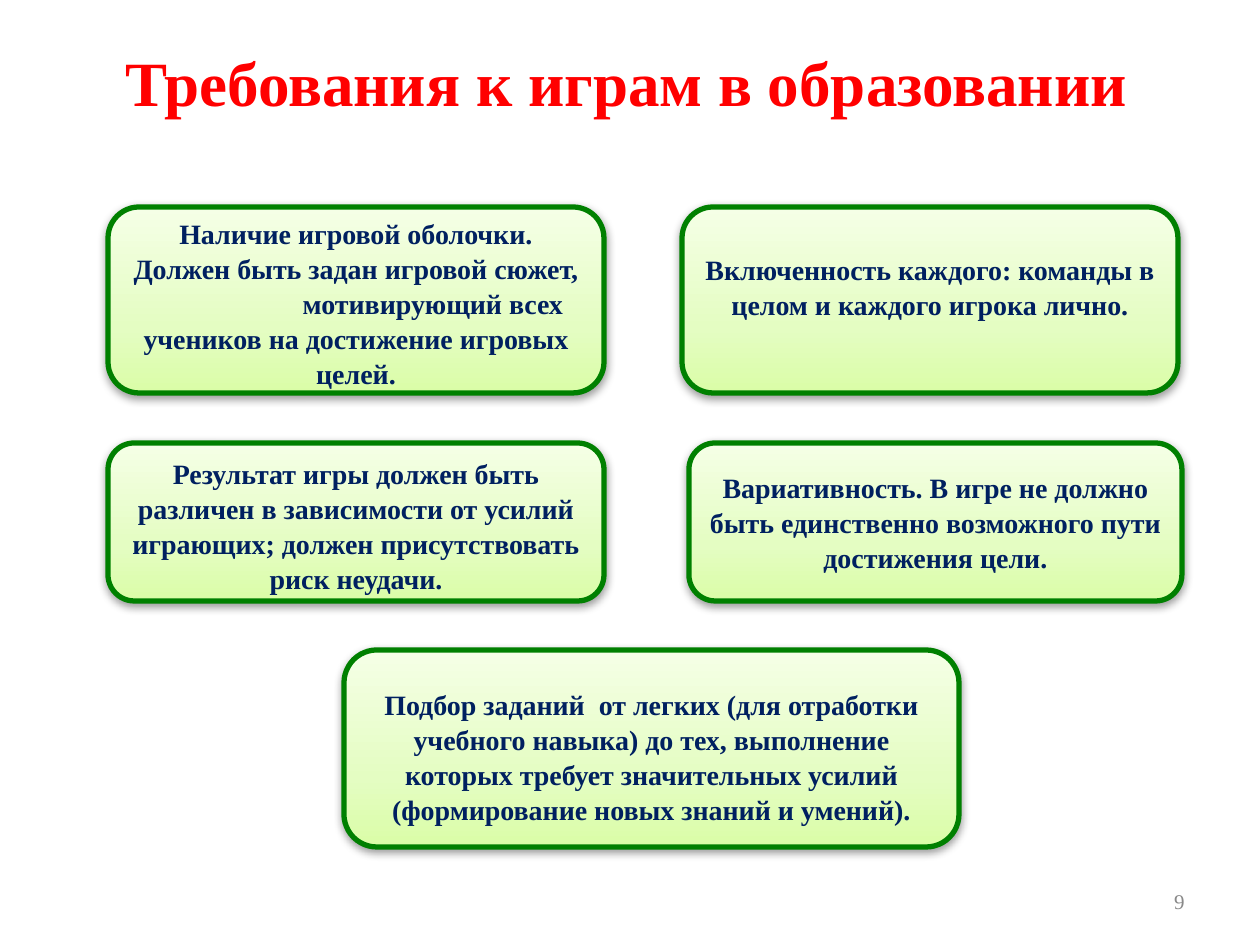
from lxml import etree
from pptx import Presentation
from pptx.dml.color import RGBColor
from pptx.enum.shapes import MSO_SHAPE
from pptx.enum.text import MSO_ANCHOR, PP_ALIGN
from pptx.oxml.ns import nsdecls
from pptx.util import Emu, Pt

ROUNDED = MSO_SHAPE.ROUNDED_RECTANGLE
MIDDLE = MSO_ANCHOR.MIDDLE
CENTER, RIGHT = PP_ALIGN.CENTER, PP_ALIGN.RIGHT

GRADIENT_STOPS = [(0, "DAFDA7"), (35, "E4FDC2"), (100, "F5FFE6")]
COLUMN_LEFT = 108
CARD_WIDTH = 496
TOP_ROW, TOP_HEIGHT = 207, 186
MIDDLE_ROW, MIDDLE_HEIGHT = 443, 158


def px(value):
    return Emu(round(value * 914400 / 126))


def color(value):
    return RGBColor.from_string(value)


class SlideBuilder:
    font_name = "Times New Roman"
    card_text = "002060"
    card_border = "008000"
    inset = 6

    def __init__(self, presentation):
        self.slide = presentation.slides.add_slide(presentation.slide_layouts[5])

    def place(self, shape, left, top, width, height):
        shape.left, shape.top = px(left), px(top)
        shape.width, shape.height = px(width), px(height)

    def format_paragraph(self, paragraph, size, text_color, bold, alignment):
        paragraph.alignment = alignment
        for run in paragraph.runs:
            run.font.name = self.font_name
            run.font.size = Pt(size)
            run.font.bold = bold
            run.font.color.rgb = color(text_color)

    def title(self, text, *box):
        shape = self.slide.shapes.title
        self.place(shape, *box)
        frame = shape.text_frame
        frame.text = text
        frame.vertical_anchor = MIDDLE
        self.format_paragraph(frame.paragraphs[0], 36, "FF0000", True, CENTER)

    def page_number(self, text, *box):
        shape = self.slide.shapes.add_textbox(*map(px, box))
        frame = shape.text_frame
        frame.word_wrap = True
        frame.text = text
        frame.vertical_anchor = MIDDLE
        self.format_paragraph(frame.paragraphs[0], 12, "898989", False, RIGHT)

    def card(self, lines, box, shift=0, indents=None):
        shape = self.slide.shapes.add_shape(ROUNDED, *map(px, box))
        shape.line.color.rgb = color(self.card_border)
        shape.line.width = Pt(3)
        self.add_gradient_and_shadow(shape)
        frame = shape.text_frame
        frame.word_wrap = True
        frame.vertical_anchor = MIDDLE
        frame.margin_top = px(self.inset + max(0, 2 * shift))
        frame.margin_bottom = px(self.inset + max(0, -2 * shift))
        frame.text = "\n".join(lines)
        for index, paragraph in enumerate(frame.paragraphs):
            self.format_paragraph(paragraph, 16, self.card_text, True, CENTER)
            paragraph.line_spacing = 1.04
            if indents and indents[index]:
                paragraph._p.get_or_add_pPr().set("marL", str(px(indents[index])))

    def add_gradient_and_shadow(self, shape):
        stops = "".join(
            f'<a:gs pos="{position * 1000}"><a:srgbClr val="{value}"/></a:gs>'
            for position, value in GRADIENT_STOPS
        )
        gradient = etree.fromstring(
            f'<a:gradFill {nsdecls("a")} rotWithShape="1"><a:gsLst>{stops}</a:gsLst>'
            '<a:lin ang="16200000" scaled="0"/></a:gradFill>'
        )
        shadow = etree.fromstring(
            f'<a:effectLst {nsdecls("a")}>'
            '<a:outerShdw blurRad="63500" dist="20320" dir="5400000" rotWithShape="0">'
            '<a:srgbClr val="000000"><a:alpha val="38000"/></a:srgbClr>'
            "</a:outerShdw></a:effectLst>"
        )
        outline = shape.line._get_or_add_ln()
        outline.addprevious(gradient)
        outline.addnext(shadow)


def main():
    presentation = Presentation()
    presentation.slide_width, presentation.slide_height = px(1260), px(945)
    builder = SlideBuilder(presentation)
    builder.title("Требования к играм в образовании", 59, 47, 1134, 69)
    builder.page_number("9", 903, 876, 294, 50)
    builder.card(
        [
            "Наличие игровой оболочки. Должен быть задан игровой сюжет,",
            "мотивирующий всех",
            "учеников на достижение игровых целей.",
        ],
        (COLUMN_LEFT, TOP_ROW, CARD_WIDTH, TOP_HEIGHT),
        shift=3,
        indents=[0, 154, 0],
    )
    builder.card(
        ["Включенность каждого: команды в целом и каждого игрока лично."],
        (682, TOP_ROW, CARD_WIDTH, TOP_HEIGHT),
        shift=-14,
    )
    builder.card(
        [
            "Результат игры должен быть различен в зависимости от усилий "
            "играющих; должен присутствовать риск неудачи."
        ],
        (COLUMN_LEFT, MIDDLE_ROW, CARD_WIDTH, MIDDLE_HEIGHT),
        shift=3,
    )
    builder.card(
        [
            "Подбор заданий  от легких (для отработки учебного навыка) до тех, "
            "выполнение которых требует значительных усилий "
            "(формирование новых знаний и умений)."
        ],
        (344, 650, 615, 197),
        shift=8,
    )
    builder.card(
        [
            "Вариативность. В игре не должно быть единственно возможного пути "
            "достижения цели."
        ],
        (689, MIDDLE_ROW, 493, MIDDLE_HEIGHT),
    )
    presentation.save("out.pptx")


if __name__ == "__main__":
    main()
